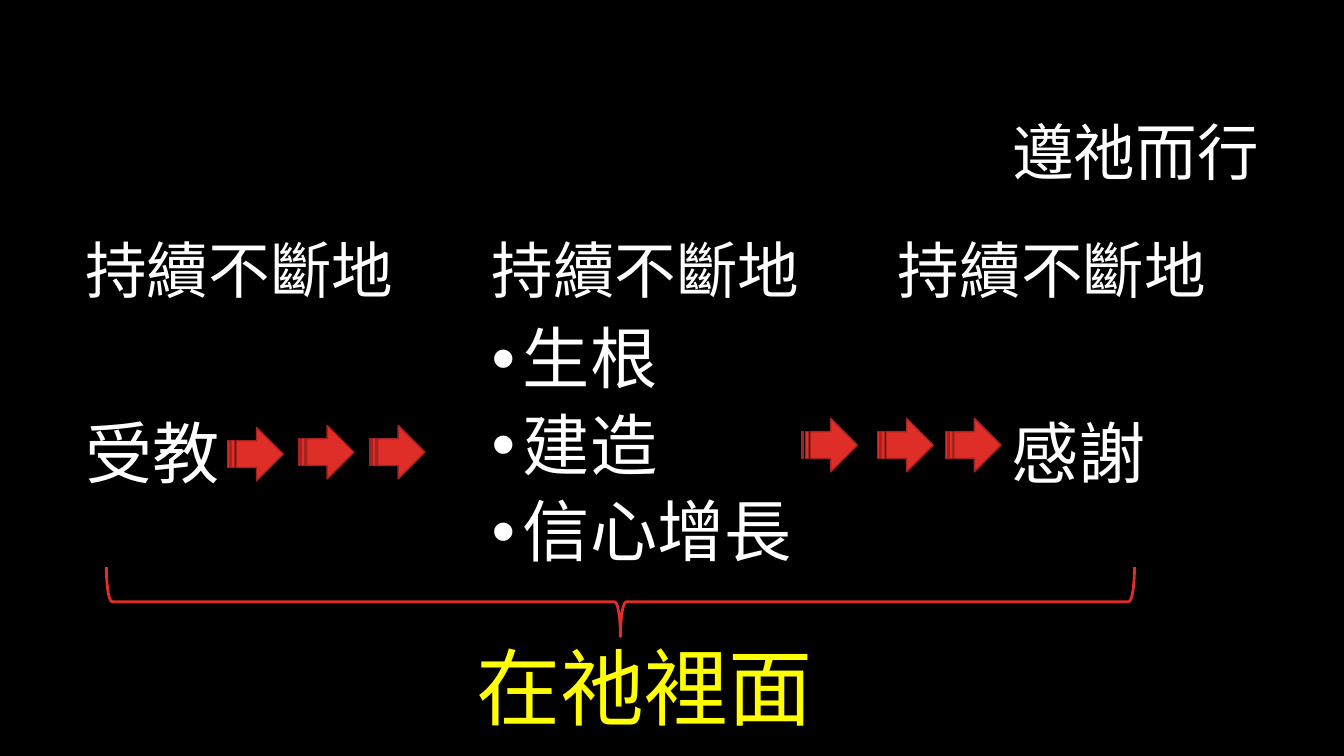
from pptx import Presentation
from pptx.dml.color import RGBColor
from pptx.enum.shapes import MSO_SHAPE
from pptx.enum.text import MSO_ANCHOR, MSO_AUTO_SIZE, PP_ALIGN
from pptx.oxml.ns import qn
from pptx.util import Cm, Pt
from lxml import etree

ARROW, BRACE = MSO_SHAPE.STRIPED_RIGHT_ARROW, MSO_SHAPE.RIGHT_BRACE
TOP, MIDDLE, BOTTOM = MSO_ANCHOR.TOP, MSO_ANCHOR.MIDDLE, MSO_ANCHOR.BOTTOM
LEFT, CENTER, RIGHT = PP_ALIGN.LEFT, PP_ALIGN.CENTER, PP_ALIGN.RIGHT
COLORS = {"back": "000000", "text": "FFFFFF", "key": "FFFF00",
          "red": "DF2E28", "edge": "A5221E"}
COLORS = {name: RGBColor.from_string(code) for name, code in COLORS.items()}


def write(box, lines, face, size, color="text", anchor=TOP, align=LEFT,
          space=0.9, bullet=False):
    frame = box.text_frame
    frame.word_wrap = True
    frame.auto_size = MSO_AUTO_SIZE.NONE
    frame.vertical_anchor = anchor
    frame.text = "\n".join(lines)
    for i, para in enumerate(frame.paragraphs):
        if bullet:
            props = para._p.get_or_add_pPr()
            props.set("marL", str(Cm(0.79)))
            props.set("indent", str(-Cm(0.79)))
            etree.SubElement(props, qn("a:buFont")).set("typeface", "Arial")
            etree.SubElement(props, qn("a:buChar")).set("char", "•")
        para.alignment = align
        para.line_spacing = space
        para.space_before = Pt(10 if i else 0)
        para.font.name = face
        para.font.size = Pt(size)
        para.font.bold = False
        para.font.color.rgb = COLORS[color]


deck = Presentation()
deck.slide_width, deck.slide_height = Cm(33.87), Cm(19.05)
slide = deck.slides.add_slide(deck.slide_layouts[5])
slide.background.fill.solid()
slide.background.fill.fore_color.rgb = COLORS["back"]
shapes = slide.shapes

# Title
title = shapes.title
title.left, title.top, title.width, title.height = Cm(8.05), Cm(2.11), Cm(23.93), Cm(3.63)
write(title, ["遵祂而行"], "Calibri", 44, anchor=MIDDLE, align=RIGHT)

# Three columns: heading and body
columns = [
    (1.9, 10.46, ["受教"], LEFT),
    (12.14, 8.08, ["生根", "建造", "信心增長"], LEFT),
    (22.38, 10.46, ["感謝"], CENTER),
]
for left, top, lines, align in columns:
    head = shapes.add_textbox(Cm(left), Cm(6.11), Cm(9.6), Cm(1.74))
    write(head, ["持續不斷地"], "Calibri", 44, anchor=BOTTOM)
    body = shapes.add_textbox(Cm(left), Cm(top), Cm(9.6), Cm(17.27 - top))
    write(body, lines, "Arial", 48, align=align, bullet=len(lines) > 1)

# Arrows between the columns
arrows = [(5.74, 10.77), (7.52, 10.72), (9.31, 10.72),
          (20.21, 10.54), (22.12, 10.54), (23.83, 10.54)]
for left, top in arrows:
    arrow = shapes.add_shape(ARROW, Cm(left), Cm(top), Cm(1.4), Cm(1.35))
    arrow.shadow.inherit = False
    arrow.fill.solid()
    arrow.fill.fore_color.rgb = COLORS["red"]
    arrow.line.color.rgb = COLORS["edge"]
    arrow.line.width = Pt(1)

# Brace and its label
label = shapes.add_textbox(Cm(11.76), Cm(15.88), Cm(9.07), Cm(2.82))
write(label, ["在祂裡面"], "Lato", 60, color="key", space=1.0)
label.text_frame.word_wrap = False
brace = shapes.add_shape(BRACE, Cm(14.76), Cm(2.21), Cm(1.75), Cm(25.91))
brace.rotation = 90
brace.shadow.inherit = False
brace.fill.background()
brace.line.color.rgb = COLORS["red"]
brace.line.width = Pt(2)

deck.save("out.pptx")
